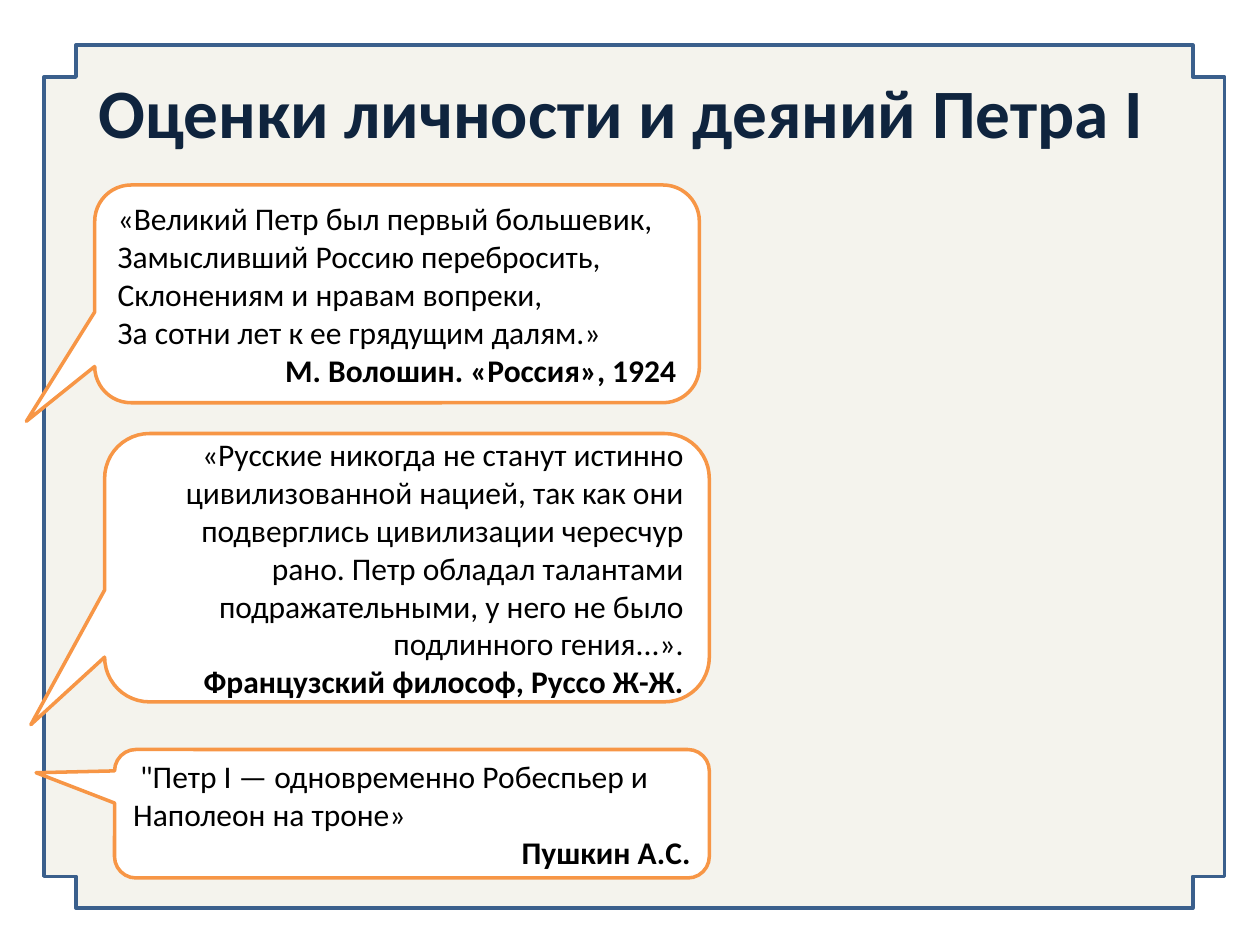
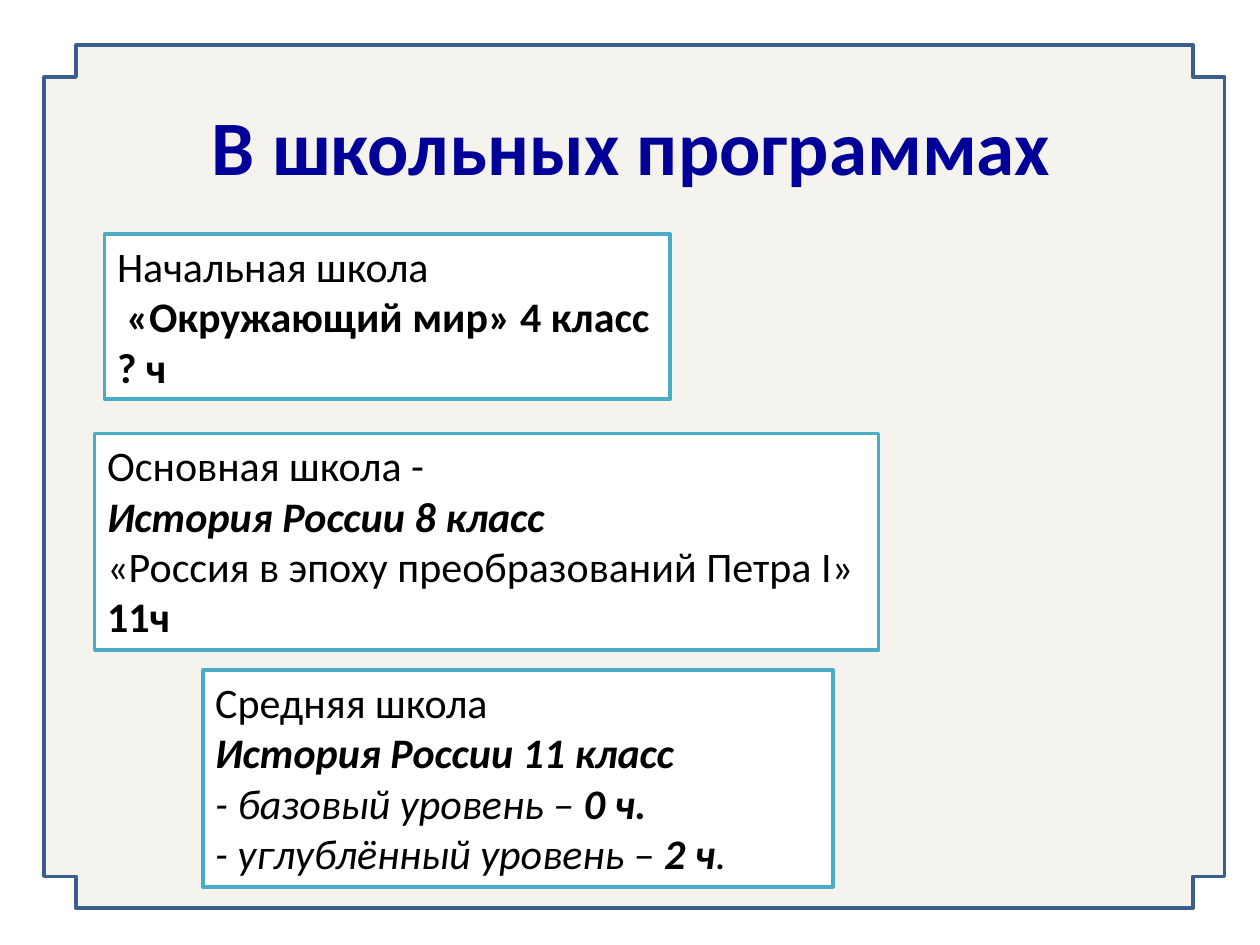
import pptx
import pptx.util
import pptx.dml.color
import pptx.enum.shapes
import pptx.enum.text
from lxml import etree

Cm, Pt = pptx.util.Cm, pptx.util.Pt
SHAPE = pptx.enum.shapes.MSO_SHAPE
ALIGN = pptx.enum.text.PP_ALIGN
ANCHOR = pptx.enum.text.MSO_ANCHOR

FONT = "Calibri"
BLACK, WHITE = "000000", "FFFFFF"
PAPER, FRAME_LINE = "EEECE1", "3A5F8C"
ORANGE, TEAL = "F79646", "4BACC6"
NAVY, BLUE = "0F243E", "000099"
FRAME = (0.89, 0.91, 23.8, 17.4)  # left, top, width, height in cm


def color(value):
    return pptx.dml.color.RGBColor.from_string(value)


def inside(box, offset):
    """Turn an offset box into slide coordinates."""
    left, top, width, height = offset
    return box[0] + left, box[1] + top, width, height


def add_panel(slide, kind, box, fill, line, adjustments=()):
    sp = slide.shapes.add_shape(kind, *map(Cm, box))
    sp.shadow.inherit = False
    sp.fill.solid()
    sp.fill.fore_color.rgb = color(fill)
    sp.line.color.rgb = color(line)
    sp.line.width = Pt(2)
    for i, value in enumerate(adjustments):
        sp.adjustments[i] = value
    return sp


def write(sp, paragraphs, size, ink=BLACK, anchor=ANCHOR.MIDDLE):
    """Each paragraph is (alignment, first indent in cm, [(text, style), ...])."""
    tf = sp.text_frame
    tf.word_wrap = True
    tf.vertical_anchor = anchor
    for n, (align, indent, runs) in enumerate(paragraphs):
        p = tf.paragraphs[0] if n == 0 else tf.add_paragraph()
        p.alignment = align
        if indent:
            p._p.get_or_add_pPr().set("indent", str(Cm(indent)))
        for text, style in runs:
            for k, piece in enumerate(text.split("\n")):
                if k:
                    p.add_line_break()
                if not piece:
                    continue
                r = p.add_run()
                r.text = piece
                formats = {"name": FONT, "size": Pt(size),
                           "bold": "b" in style, "italic": "i" in style}
                for key, value in formats.items():
                    setattr(r.font, key, value)
                r.font.color.rgb = color(ink)


def add_frame(slide, box):
    sp = add_panel(slide, SHAPE.CROSS, box, PAPER, FRAME_LINE, [0.037])
    # 60 % opaque fill
    rgb = sp.fill._xPr.solidFill[0]
    alpha = etree.SubElement(rgb, pptx.oxml.ns.qn("a:alpha"))
    alpha.set("val", "60000")


def add_title(slide, box, text, size, ink):
    sp = slide.shapes.add_textbox(*map(Cm, box))
    write(sp, [(ALIGN.CENTER, 0, [(text, "b")])], size, ink)


def add_quote(slide, box, tail, paragraphs):
    sp = add_panel(slide, SHAPE.ROUNDED_RECTANGULAR_CALLOUT, box,
                   WHITE, ORANGE, [*tail, 0.167])
    write(sp, paragraphs, 18)


def add_course(slide, box, paragraphs):
    sp = add_panel(slide, SHAPE.RECTANGLE, box, WHITE, TEAL)
    write(sp, paragraphs, 24, anchor=ANCHOR.TOP)


def new_slide(prs):
    slide = prs.slides.add_slide(prs.slide_layouts[6])
    add_frame(slide, FRAME)
    return slide


QUOTES = [
    ((1.02, 2.82, 12.19, 4.39), (-0.613, 0.585), [
        (ALIGN.LEFT, 0, [("«Великий Петр был первый большевик,\n"
                          "Замысливший Россию перебросить,\n"
                          "Склонениям и нравам вопреки,\n"
                          "За сотни лет к ее грядущим далям.»", "")]),
        (ALIGN.RIGHT, 0, [("М. Волошин. «Россия», 1924", "b")])]),
    ((1.22, 7.83, 12.19, 5.41), (-0.622, 0.585), [
        (ALIGN.RIGHT, 0, [
            ("«Русские никогда не станут истинно цивилизованной нацией, "
             "так как они подверглись цивилизации чересчур рано. "
             "Петр обладал талантами подражательными, "
             "у него не было подлинного гения...».\n", ""),
            ("Французский философ, Руссо Ж-Ж.", "b")])]),
    ((1.42, 14.2, 11.99, 2.59), (-0.632, -0.319), [
        (ALIGN.LEFT, 0.14, [('"Петр I — одновременно Робеспьер и '
                             'Наполеон на троне»', "")]),
        (ALIGN.RIGHT, 0, [("Пушкин А.С.", "b")])]),
]

COURSES = [
    ((1.22, 3.81, 11.4, 3.33), [
        (ALIGN.LEFT, 0, [("Начальная школа", "")]),
        (ALIGN.LEFT, 0.19, [("«Окружающий мир» 4 класс", "b")]),
        (ALIGN.LEFT, 0, [("? ч", "b")])]),
    ((1.02, 7.83, 15.8, 4.37), [
        (ALIGN.LEFT, 0, [("Основная школа -", "")]),
        (ALIGN.LEFT, 0, [("История России 8 класс", "bi")]),
        (ALIGN.LEFT, 0, [("«Россия в эпоху преобразований Петра I» ", ""),
                         ("11ч", "b")])]),
    ((3.2, 12.6, 12.7, 4.37), [
        (ALIGN.LEFT, 0, [("Средняя школа", "")]),
        (ALIGN.LEFT, 0, [("История России 11 класс", "bi")]),
        (ALIGN.LEFT, 0, [("- базовый уровень – ", "i"), ("0 ч.", "bi")]),
        (ALIGN.LEFT, 0, [("- углублённый уровень – ", "i"),
                         ("2 ч", "bi"), (".", "i")])]),
]


def quotes_slide(prs, box):
    slide = new_slide(prs)
    add_title(slide, inside(box, (0.2, 0.21, 22.86, 2.21)),
              "Оценки личности и деяний Петра I", 39.6, NAVY)
    for offset, tail, paragraphs in QUOTES:
        add_quote(slide, inside(box, offset), tail, paragraphs)


def courses_slide(prs, box):
    slide = new_slide(prs)
    add_title(slide, inside(box, (0.41, 0.41, 22.86, 3.18)),
              "В школьных программах", 44, BLUE)
    for offset, paragraphs in COURSES:
        add_course(slide, inside(box, offset), paragraphs)


def main():
    prs = pptx.Presentation()
    prs.slide_width, prs.slide_height = Cm(25.4), Cm(19.05)
    quotes_slide(prs, FRAME)
    courses_slide(prs, FRAME)
    prs.save("out.pptx")


if __name__ == "__main__":
    main()
